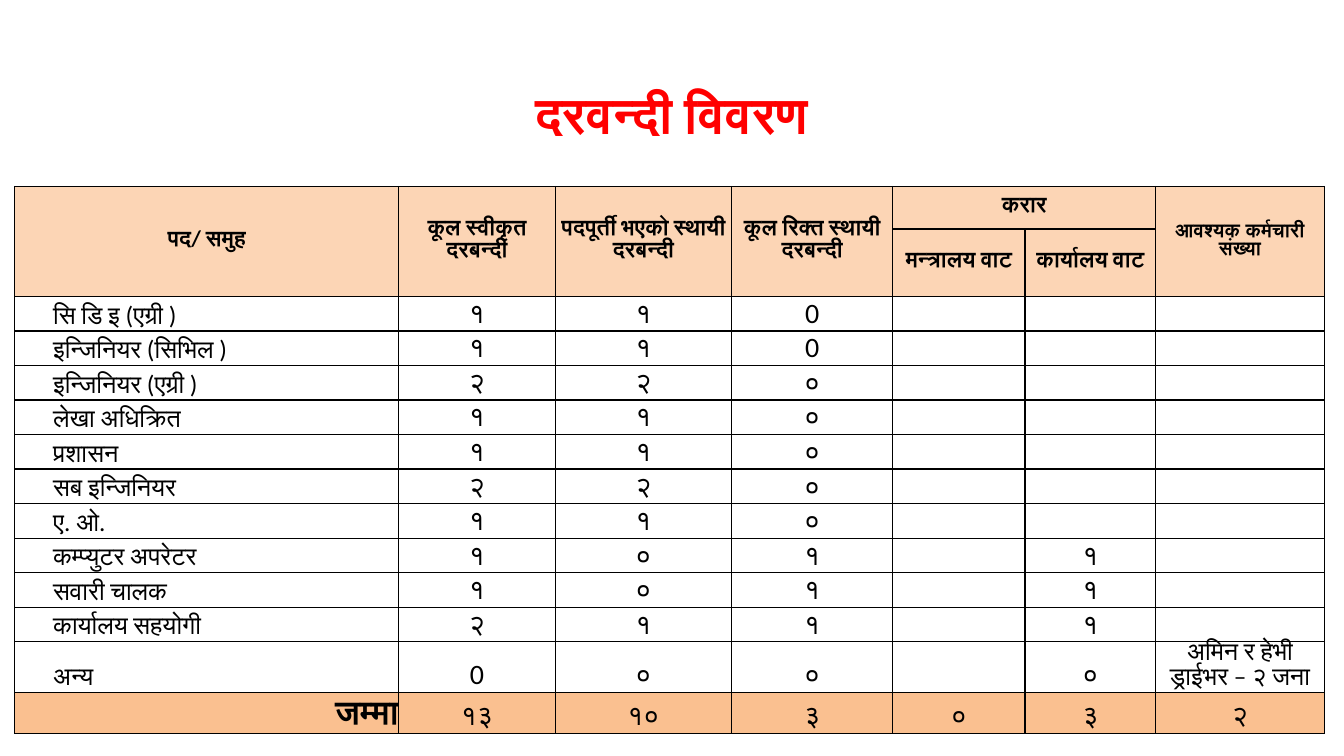
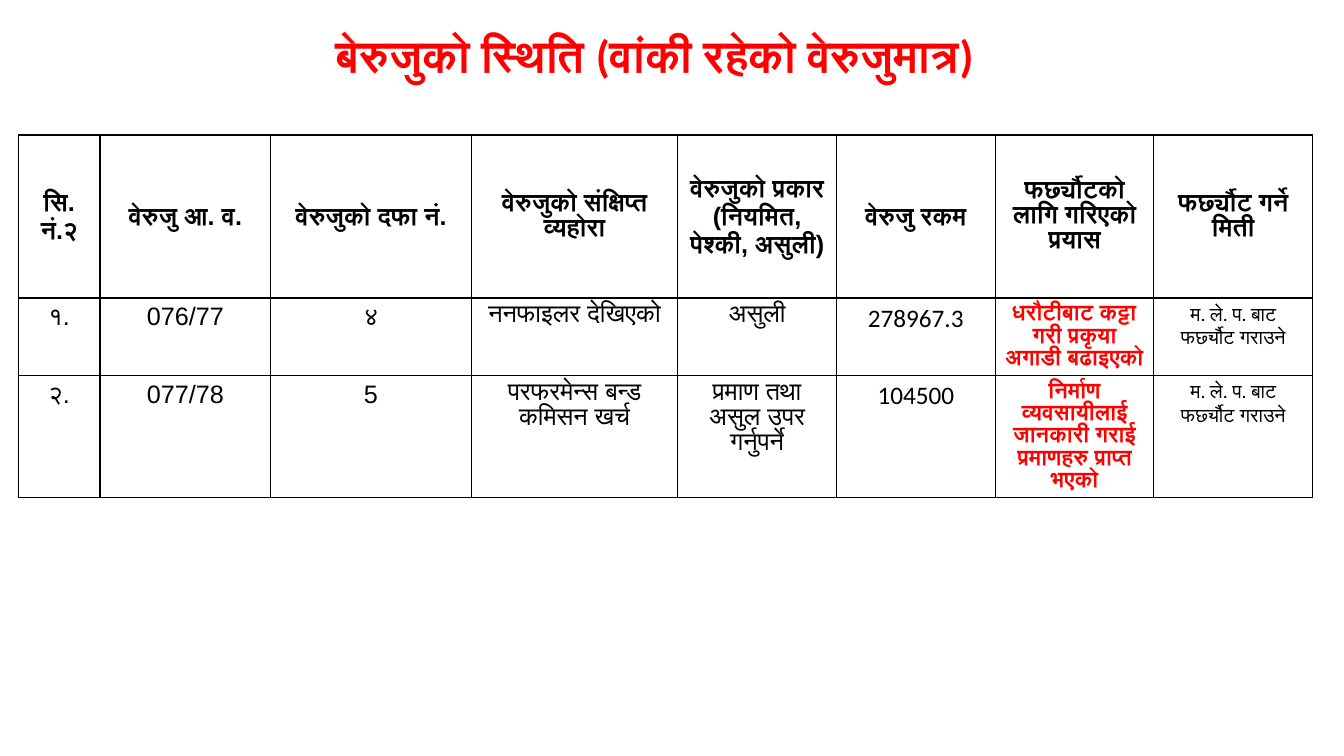
import pptx
import pptx.util
import pptx.dml.color
import pptx.enum.text
import pptx.oxml
import pptx.oxml.ns

Cm = pptx.util.Cm
Pt = pptx.util.Pt
ALIGN = pptx.enum.text.PP_ALIGN
ANCHOR = pptx.enum.text.MSO_ANCHOR

BLACK, RED, WHITE = "000000", "FF0000", "FFFFFF"
HEADER_FILL, TOTAL_FILL = "FCD5B5", "FAC090"

STAFF_TITLE = [("दरवन्दी विवरण", "Calibri")]
STAFF_COLUMNS = [9.68, 3.94, 4.45, 4.06, 3.33, 3.3, 4.24]
STAFF_HEADER = [
    ["पद/ समुह", "कूल स्वीकृत दरबन्दी", "पदपूर्ती भएको स्थायी दरबन्दी",
     "कूल रिक्त स्थायी दरबन्दी", "करार", "",
     [("आवश्यक कर्मचारी ", "Arial"), ("संख्या", "Calibri")]],
    ["", "", "", "", "मन्त्रालय वाट", "कार्यालय वाट", ""],
]
STAFF_ROWS = [
    ["सि डि इ (एग्री )", "१", "१", "0", "", "", ""],
    ["इन्जिनियर (सिभिल )", "१", "१", "0", "", "", ""],
    ["इन्जिनियर (एग्री )", "२", "२", "०", "", "", ""],
    ["लेखा अधिक्रित", "१", "१", "०", "", "", ""],
    ["प्रशासन", "१", "१", "०", "", "", ""],
    ["सब इन्जिनियर", "२", "२", "०", "", "", ""],
    ["ए. ओ.", "१", "१", "०", "", "", ""],
    ["कम्प्युटर अपरेटर", "१", "०", "१", "", "१", ""],
    ["सवारी चालक", "१", "०", "१", "", "१", ""],
    ["कार्यालय सहयोगी", "२", "१", "१", "", "१", ""],
    ["अन्य", "0", "०", "०", "", "०", "अमिन र हेभी ड्राईभर – २ जना"],
]
STAFF_TOTAL = ["जम्मा", "१३", "१०", "३", "०", "३", "२"]

AUDIT_TITLE = [
    ("बेरुजु", "Lato"), ("को", "Calibri"), (" स्थिति ", "Lato"), ("(", "Calibri"),
    ("वांकी रहेको वेरुजुमात्र", "Lato"), (")", "Calibri"),
]
AUDIT_COLUMNS = [2.06, 4.3, 5.06, 5.2, 4, 4, 4, 4]
AUDIT_HEADER = [
    "सि. नं.२", "वेरुजु आ. व.", "वेरुजुको दफा नं.", "वेरुजुको संक्षिप्त व्यहोरा",
    "वेरुजुको प्रकार (नियमित, पेश्की, असुली)", "वेरुजु रकम",
    "फर्छ्यौटको लागि गरिएको प्रयास", "फर्छ्यौट गर्ने मिती",
]
SETTLEMENT = [("म. ले. प. बाट ", "Calibri"), ("फर्छ्यौट गराउने", "Arial")]
AUDIT_ROWS = [
    ["१.", "076/77", "४", "ननफाइलर देखिएको", "असुली", "278967.3",
     "धरौटीबाट कट्टा गरी प्रकृया अगाडी बढाइएको", SETTLEMENT],
    ["२.", "077/78", "5", "परफरमेन्स बन्ड कमिसन खर्च",
     "प्रमाण तथा असुल उपर गर्नुपर्ने", "104500",
     "निर्माण व्यवसायीलाई जानकारी गराई प्रमाणहरु प्राप्त भएको", SETTLEMENT],
]
AUDIT_STYLES = {
    5: {"font": "Calibri"},
    6: {"size": 16, "color": RED, "bold": True},
    7: {"size": 14},
}


def rgb(value):
    return pptx.dml.color.RGBColor.from_string(value)


def set_typeface(font, properties, name):
    font.name = name
    complex_script = pptx.oxml.parse_xml(
        f'<a:cs {pptx.oxml.ns.nsdecls("a")} typeface="{name}"/>')
    properties.append(complex_script)


def write(paragraph, content, size, font="Calibri", color=BLACK, bold=False,
          align=ALIGN.CENTER, spacing=None):
    paragraph.alignment = align
    if spacing:
        paragraph.line_spacing = Pt(spacing)
    paragraph.font.size = Pt(size)
    paragraph.font.bold = bold
    paragraph.font.color.rgb = rgb(color)
    if isinstance(content, str):
        paragraph.add_run().text = content
        properties = paragraph._p.pPr.find(pptx.oxml.ns.qn("a:defRPr"))
        set_typeface(paragraph.font, properties, font)
        return
    for text, name in content:
        run = paragraph.add_run()
        run.text = text
        set_typeface(run.font, run._r.get_or_add_rPr(), name)


def add_titled_slide(presentation, content, size, left, top, width, height):
    slide = presentation.slides.add_slide(presentation.slide_layouts[5])
    title = slide.shapes.title
    title.left, title.top, title.width, title.height = map(Cm, (left, top, width, height))
    frame = title.text_frame
    frame.auto_size = pptx.enum.text.MSO_AUTO_SIZE.NONE
    frame.vertical_anchor = ANCHOR.MIDDLE
    write(frame.paragraphs[0], content, size, color=RED, bold=True)
    return slide


def add_grid(slide, left, top, columns, rows):
    table = slide.shapes.add_table(
        len(rows), len(columns), Cm(left), Cm(top), Cm(sum(columns)), Cm(sum(rows))).table
    table.first_row = table.horz_banding = False
    for column, width in zip(table.columns, columns):
        column.width = Cm(width)
    for row, height in zip(table.rows, rows):
        row.height = Cm(height)
    for cell in table.iter_cells():
        properties = cell._tc.get_or_add_tcPr()
        for side in ("lnL", "lnR", "lnT", "lnB"):
            properties.append(pptx.oxml.parse_xml(
                f'<a:{side} {pptx.oxml.ns.nsdecls("a")} w="12700"><a:solidFill>'
                f'<a:srgbClr val="{BLACK}"/></a:solidFill></a:{side}>'))
        cell.fill.background()
    return table


def format_cell(cell, fill, anchor):
    cell.fill.solid()
    cell.fill.fore_color.rgb = rgb(fill)
    cell.vertical_anchor = anchor
    cell.margin_left = cell.margin_right = cell.margin_top = cell.margin_bottom = 0


def staff_style(row, column, total_row):
    if row < len(STAFF_HEADER):
        size = 14 if column == 6 else 16
        return {"size": size, "bold": True, "spacing": size}
    if column == 0:
        if row == total_row:
            return {"size": 24, "bold": True, "align": ALIGN.RIGHT}
        return {"size": 18, "align": ALIGN.LEFT}
    if column == 6 and row < total_row:
        return {"size": 18, "spacing": 18}
    return {"size": 20}


def build_staff_slide(presentation):
    slide = add_titled_slide(presentation, STAFF_TITLE, 36, 0, 2.06, 33.87, 1.6)
    rows = STAFF_HEADER + STAFF_ROWS + [STAFF_TOTAL]
    total_row = len(rows) - 1
    heights = [1.07, 1.7] + [0.87] * len(STAFF_ROWS) + [1.02]
    table = add_grid(slide, 0.37, 4.7, STAFF_COLUMNS, heights)
    for row, values in enumerate(rows):
        is_header = row < len(STAFF_HEADER)
        fill = HEADER_FILL if is_header else TOTAL_FILL if row == total_row else WHITE
        for column, value in enumerate(values):
            cell = table.cell(row, column)
            format_cell(cell, fill, ANCHOR.MIDDLE if is_header else ANCHOR.BOTTOM)
            if not value:
                continue
            paragraph = cell.text_frame.paragraphs[0]
            if column == 0 and not is_header:
                paragraph._p.get_or_add_pPr().set("marL", str(Cm(0.97)))
            write(paragraph, value, **staff_style(row, column, total_row))
    for column in (0, 1, 2, 3, 6):
        table.cell(0, column).merge(table.cell(1, column))
    table.cell(0, 4).merge(table.cell(0, 5))


def build_audit_slide(presentation):
    slide = add_titled_slide(presentation, AUDIT_TITLE, 32, 0.46, 0.64, 32.08, 1.47)
    table = add_grid(slide, 0.46, 3.4, AUDIT_COLUMNS, [4.11, 1.27, 1.42])
    for row, values in enumerate([AUDIT_HEADER] + AUDIT_ROWS):
        for column, value in enumerate(values):
            cell = table.cell(row, column)
            cell.vertical_anchor = ANCHOR.TOP if row else ANCHOR.MIDDLE
            style = {"size": 18, "font": "Arial", "bold": row == 0}
            if row:
                style.update(AUDIT_STYLES.get(column, {}))
            if column in ((3, 4, 6) if row else (3, 6, 7)):
                style["spacing"] = style["size"]
            write(cell.text_frame.paragraphs[0], value, **style)


def main():
    presentation = pptx.Presentation()
    presentation.slide_width = Cm(33.87)
    presentation.slide_height = Cm(19.05)
    build_staff_slide(presentation)
    build_audit_slide(presentation)
    presentation.save("out.pptx")


if __name__ == "__main__":
    main()
